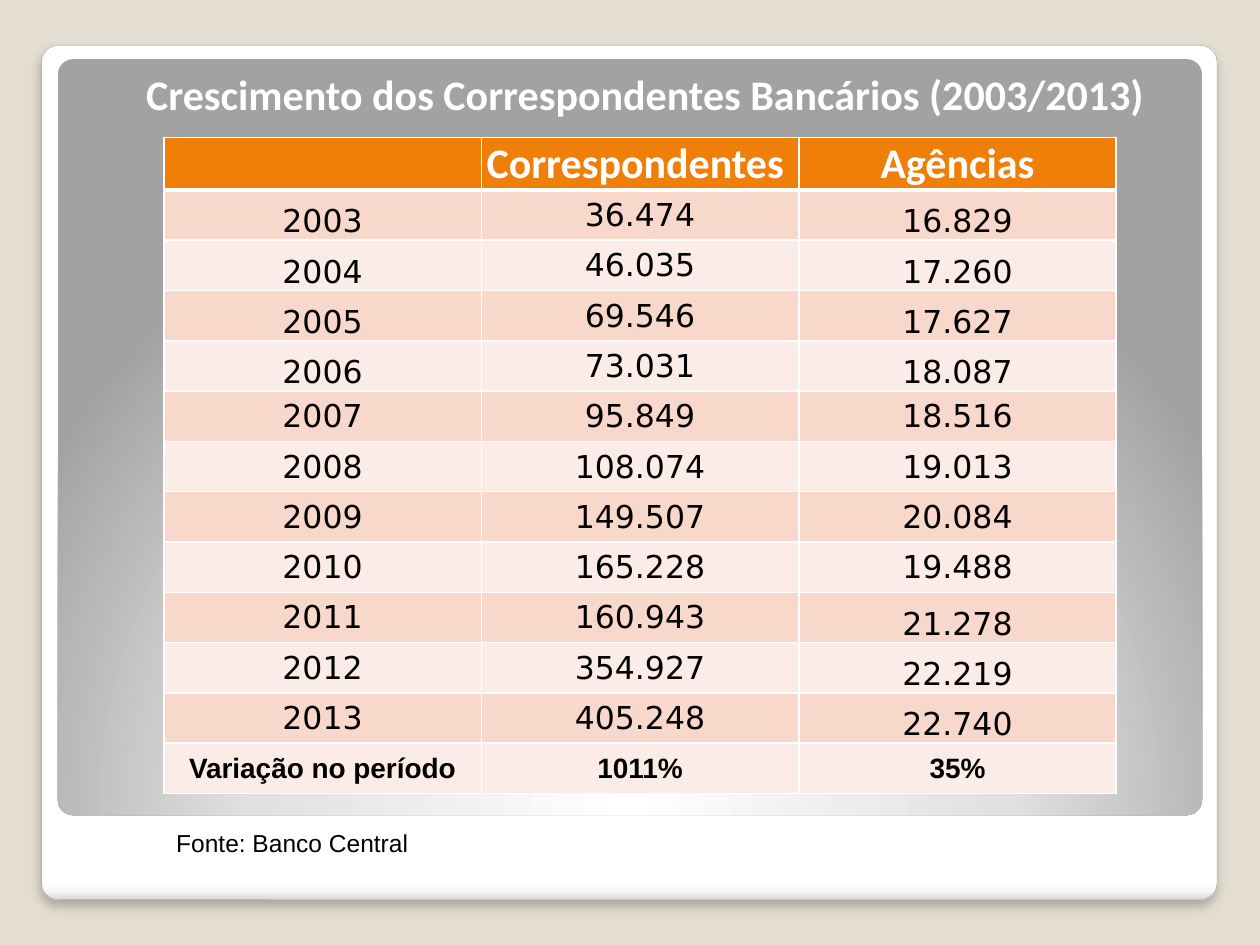
"""Build a slide with a table of banking correspondents and branches by year."""
import pptx
import pptx.dml.color
import pptx.enum.shapes
import pptx.enum.text
import pptx.oxml
import pptx.oxml.ns
import pptx.util

Pt = pptx.util.Pt
ALIGN = pptx.enum.text.PP_ALIGN
ANCHOR = pptx.enum.text.MSO_ANCHOR
NS = pptx.oxml.ns.nsdecls("a")

TITLE = "Crescimento dos Correspondentes Bancários (2003/2013)"
SOURCE = "Fonte: Banco Central"
ROWS = [
    ("", "Correspondentes ", "Agências"),
    ("2003", "36.474", "16.829"),
    ("2004", "46.035", "17.260"),
    ("2005", "69.546", "17.627"),
    ("2006", "73.031", "18.087"),
    ("2007", "95.849", "18.516"),
    ("2008", "108.074", "19.013"),
    ("2009", "149.507", "20.084"),
    ("2010", "165.228", "19.488"),
    ("2011", "160.943", "21.278"),
    ("2012", "354.927", "22.219"),
    ("2013", "405.248", "22.740"),
    ("Variação no período", "1011%", "35%"),
]
LOW = {0: (1, 2, 3, 4), 1: (), 2: (1, 2, 3, 4, 9, 10, 11)}
BANDS = ("FCECE7", "F9D8CC")
HEAD = {"name": "Calibri", "size": Pt(24), "bold": True}
BODY = {"name": "DejaVu Sans", "size": Pt(18), "bold": False}
TOTAL = {"name": "Arial", "size": Pt(16), "bold": True}
NOTE = {"name": "Arial", "size": Pt(14), "bold": False}
PANELS = [
    {
        "box": (23.76, 25.92, 671.76, 488.16),
        "stops": [(0, "FFFFFF"), (98, "FFFFFF"), (99, "F7F7F7"), (100, "DADADA")],
        "shade": '<a:lin ang="5400000" scaled="0"/>',
        "line": "A4A4A4",
    },
    {
        "box": (33.12, 33.84, 653.76, 432),
        "stops": [(0, "FFFFFF"), (55, "E1E1E1"), (100, "A2A2A2")],
        "shade": '<a:path path="circle"><a:fillToRect l="50000" t="175000" '
                 'r="50000" b="-75000"/></a:path>',
        "line": None,
    },
]


def tint(form, code):
    form.rgb = pptx.dml.color.RGBColor.from_string(code)


def paint(fill, code):
    fill.solid()
    tint(fill.fore_color, code)


def put(thing, style):
    for key, value in style.items():
        setattr(thing, key, value)


def place(box):
    return [Pt(n) for n in box]


def write(frame, text, style, code, align):
    frame.text = text
    para = frame.paragraphs[0]
    para.alignment = align
    put(para.font, style)
    for run in para.runs:
        put(run.font, style)
        tint(run.font.color, code)


def add_panel(slide, panel):
    kind = pptx.enum.shapes.MSO_SHAPE.ROUNDED_RECTANGLE
    shape = slide.shapes.add_shape(kind, *place(panel["box"]))
    shape.adjustments[0] = 0.02
    shape.shadow.inherit = False
    stops = "".join(
        f'<a:gs pos="{pos * 1000}"><a:srgbClr val="{code}"/></a:gs>'
        for pos, code in panel["stops"])
    props = shape._element.spPr
    props.insert(2, pptx.oxml.parse_xml(
        f'<a:gradFill {NS} rotWithShape="1"><a:gsLst>{stops}</a:gsLst>'
        f'{panel["shade"]}</a:gradFill>'))
    if not panel["line"]:
        shape.line.fill.background()
        return
    paint(shape.line.fill, panel["line"])
    shape.line.width = Pt(0.16)
    props.find(pptx.oxml.ns.qn("a:effectLst")).append(pptx.oxml.parse_xml(
        f'<a:outerShdw {NS} blurRad="{Pt(6)}" dist="{Pt(4)}" dir="5400000" '
        'rotWithShape="0"><a:srgbClr val="000000"><a:alpha val="25000"/>'
        '</a:srgbClr></a:outerShdw>'))


def edge(cell, base):
    props = cell._tc.get_or_add_tcPr()
    for spot, side in enumerate("LRTB"):
        width = Pt(base if side == "B" else 1)
        props.insert(spot, pptx.oxml.parse_xml(
            f'<a:ln{side} {NS} w="{width}"><a:solidFill>'
            f'<a:srgbClr val="FFFFFF"/></a:solidFill></a:ln{side}>'))


def add_grid(slide):
    last = len(ROWS) - 1
    box = place((93.6, 78.48, 544.32, 28.75 * len(ROWS)))
    grid = slide.shapes.add_table(len(ROWS), len(ROWS[0]), *box).table
    for r, row in enumerate(ROWS):
        style = HEAD if r == 0 else TOTAL if r == last else BODY
        for c, text in enumerate(row):
            cell = grid.cell(r, c)
            put(cell, {
                "margin_left": Pt(0.72), "margin_right": Pt(0.72),
                "margin_top": Pt(0.72), "margin_bottom": Pt(0),
                "vertical_anchor": ANCHOR.BOTTOM if r in LOW[c] else ANCHOR.MIDDLE,
            })
            paint(cell.fill, BANDS[r % 2] if r else "F07F09")
            write(cell.text_frame, text, style, "000000" if r else "FFFFFF",
                  ALIGN.CENTER)
            edge(cell, 1 if r else 3)


def add_title(slide):
    title = slide.shapes.title
    put(title, dict(zip(("left", "top", "width", "height"),
                        place((-16.56, 35.28, 734.4, 36)))))
    put(title.text_frame, {
        "word_wrap": True, "margin_left": Pt(43.2),
        "vertical_anchor": ANCHOR.TOP,
        "auto_size": pptx.enum.text.MSO_AUTO_SIZE.NONE,
    })
    write(title.text_frame, TITLE, HEAD, "FFFFFF", ALIGN.CENTER)
    slide.shapes._spTree.append(title._element)


def main():
    deck = pptx.Presentation()
    put(deck, {"slide_width": Pt(720), "slide_height": Pt(540)})
    slide = deck.slides.add_slide(deck.slide_layouts[5])
    paint(slide.background.fill, "E3DED1")
    for panel in PANELS:
        add_panel(slide, panel)
    add_grid(slide)
    add_title(slide)
    note = slide.shapes.add_textbox(*place((93.6, 469.44, 164.16, 24.48)))
    note.text_frame.word_wrap = True
    write(note.text_frame, SOURCE, NOTE, "000000", ALIGN.LEFT)
    deck.save("out.pptx")


if __name__ == "__main__":
    main()
